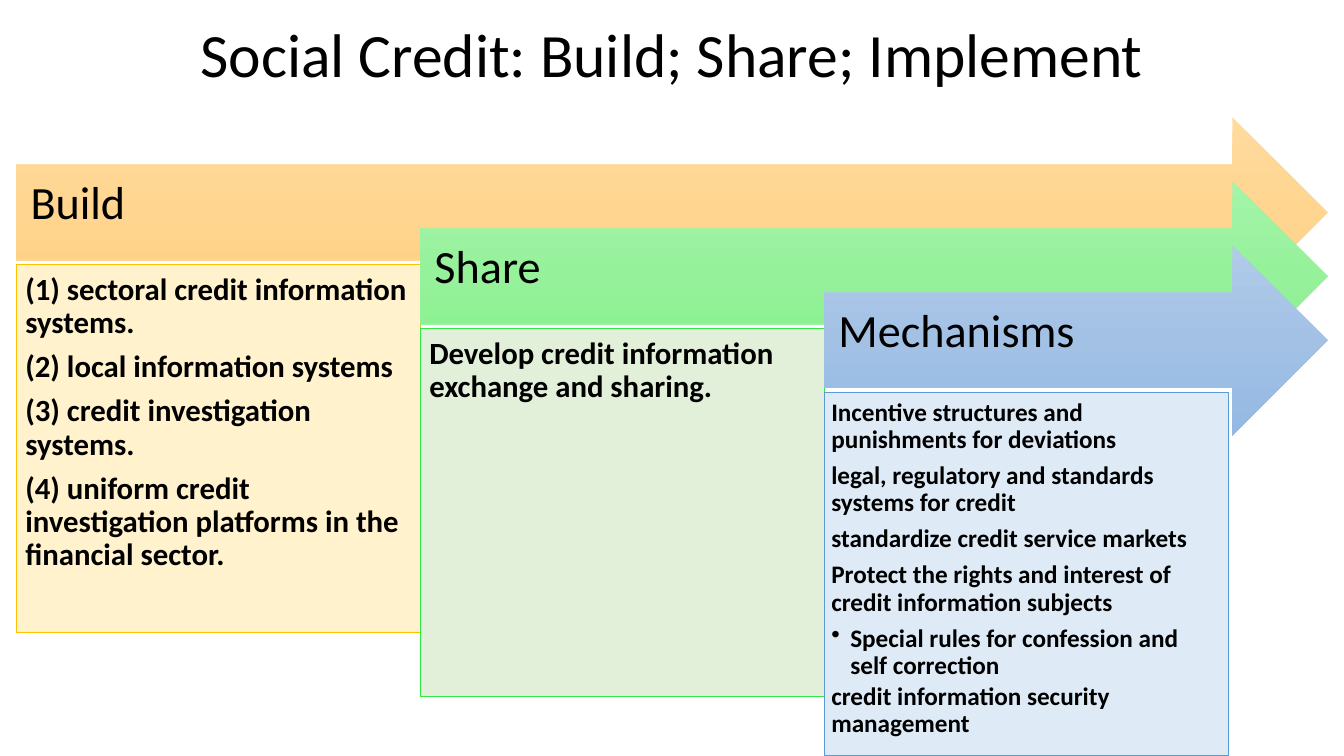
import copy
from dataclasses import dataclass

import pptx
import pptx.util
from lxml import etree
from pptx.dml.color import RGBColor
from pptx.enum.shapes import MSO_SHAPE
from pptx.enum.text import MSO_ANCHOR, MSO_AUTO_SIZE, PP_ALIGN
from pptx.oxml.ns import qn
from pptx.util import Cm


@dataclass(frozen=True)
class Theme:
    font: str = "Calibri"
    ink: str = "000000"
    title: int = 44
    label: int = 33
    line: float = 0.5
    tight: float = 0.9


@dataclass(frozen=True)
class Stage:
    name: str
    shades: tuple
    fill: str
    edge: str
    size: int
    gap: float
    inset: float
    tall: float
    items: tuple


THEME = Theme()
BULLET = "• "
LEFT, TOP, RIGHT = 0.41, 2.95, 33.46
STEP, DROP = 10.18, 1.61
ARROW, SHAFT, SIDE = 4.81, 2.41, 1.2
BODY = 3.72

STAGES = (
    Stage("Build", ("FFDB9E", "FFD590", "FFD07C"), "FFF2CC", "FFC000",
          22, 7.8, 0.23, 9.27, (
              "(1) sectoral credit information systems.",
              "(2) local information systems",
              "(3) credit investigation systems.",
              "(4) uniform credit investigation platforms in the financial sector.",
          )),
    Stage("Share", ("A4F4A9", "96F19B", "82F388"), "E2F0D9", "30E845",
          22, 7.8, 0.23, 9.27, (
              "Develop credit information exchange and sharing.",
          )),
    Stage("Mechanisms", ("B1CBE9", "A3C1E5", "93B9E4"), "DEEBF7", "5B9BD5",
          18, 6.3, 0.18, 9.14, (
              "Incentive structures and punishments for deviations",
              "legal, regulatory and standards systems for credit",
              "standardize credit service markets",
              "Protect the rights and interest of credit information subjects",
              BULLET + "Special rules for confession and self correction",
              "credit information security management",
          )),
)


def color(code):
    return RGBColor.from_string(code)


def write(para, text, size, bold=False):
    para.line_spacing = THEME.tight
    run = para.add_run()
    run.text = text
    run.font.name = THEME.font
    run.font.size = pptx.util.Pt(size)
    run.font.bold = bold
    run.font.color.rgb = color(THEME.ink)


def set_frame(frame, anchor, insets):
    frame.word_wrap = True
    frame.auto_size = MSO_AUTO_SIZE.NONE
    frame.vertical_anchor = anchor
    (frame.margin_left, frame.margin_top,
     frame.margin_right, frame.margin_bottom) = map(Cm, insets)


def add_bullet(para):
    props = para._p.get_or_add_pPr()
    props.set("lvl", "1")
    props.set("marL", str(Cm(0.48)))
    props.set("indent", str(Cm(-0.48)))
    etree.SubElement(props, qn("a:buChar")).set("char", BULLET.strip())


def add_title(slide, text):
    title = slide.shapes.title
    title.left, title.top = Cm(2.34), Cm(0)
    title.width, title.height = Cm(29.21), Cm(2.92)
    set_frame(title.text_frame, MSO_ANCHOR.MIDDLE, (0.25, 0.13, 0.25, 0.13))
    para = title.text_frame.paragraphs[0]
    para.alignment = PP_ALIGN.CENTER
    write(para, text, THEME.title)


def add_arrow(slide, left, top, shades):
    arrow = slide.shapes.add_shape(
        MSO_SHAPE.RIGHT_ARROW, Cm(left), Cm(top), Cm(RIGHT - left), Cm(ARROW))
    arrow.shadow.inherit = False
    arrow.line.fill.background()
    arrow.fill.gradient()
    arrow.fill.gradient_angle = 270
    stops = arrow._element.spPr.find(".//" + qn("a:gsLst"))
    stops.insert(1, copy.deepcopy(stops[0]))
    for index, stop in enumerate(arrow.fill.gradient_stops):
        stop.position = index / 2
        stop.color.rgb = color(shades[index])


def add_label(slide, left, top, text):
    box = slide.shapes.add_textbox(
        Cm(left), Cm(top), Cm(RIGHT - SIDE - left), Cm(SHAFT))
    set_frame(box.text_frame, MSO_ANCHOR.MIDDLE, (0.36, 0.36, 0.71, 0.76))
    write(box.text_frame.paragraphs[0], text, THEME.label)


def add_body(slide, left, top, stage):
    box = slide.shapes.add_shape(
        MSO_SHAPE.RECTANGLE, Cm(left), Cm(top), Cm(STEP), Cm(stage.tall))
    box.shadow.inherit = False
    box.fill.solid()
    box.fill.fore_color.rgb = color(stage.fill)
    box.line.color.rgb = color(stage.edge)
    box.line.width = pptx.util.Pt(THEME.line)
    frame = box.text_frame
    set_frame(frame, MSO_ANCHOR.TOP, (stage.inset,) * 4)
    for index, item in enumerate(stage.items):
        para = frame.add_paragraph() if index else frame.paragraphs[0]
        para.alignment = PP_ALIGN.LEFT
        para.line_spacing = THEME.tight
        para.space_after = pptx.util.Pt(stage.gap)
        if item.startswith(BULLET):
            para.space_after = pptx.util.Pt(2.7)
            add_bullet(para)
        write(para, item.removeprefix(BULLET), stage.size, True)


def main():
    deck = pptx.Presentation()
    deck.slide_width, deck.slide_height = Cm(33.87), Cm(19.05)
    slide = deck.slides.add_slide(deck.slide_layouts[5])
    add_title(slide, "Social Credit: Build; Share; Implement")
    for index, stage in enumerate(STAGES):
        left, top = LEFT + index * STEP, TOP + index * DROP
        add_arrow(slide, left, top, stage.shades)
        add_label(slide, left, top + SIDE, stage.name)
        add_body(slide, left, top + BODY, stage)
    deck.save("out.pptx")


if __name__ == "__main__":
    main()
